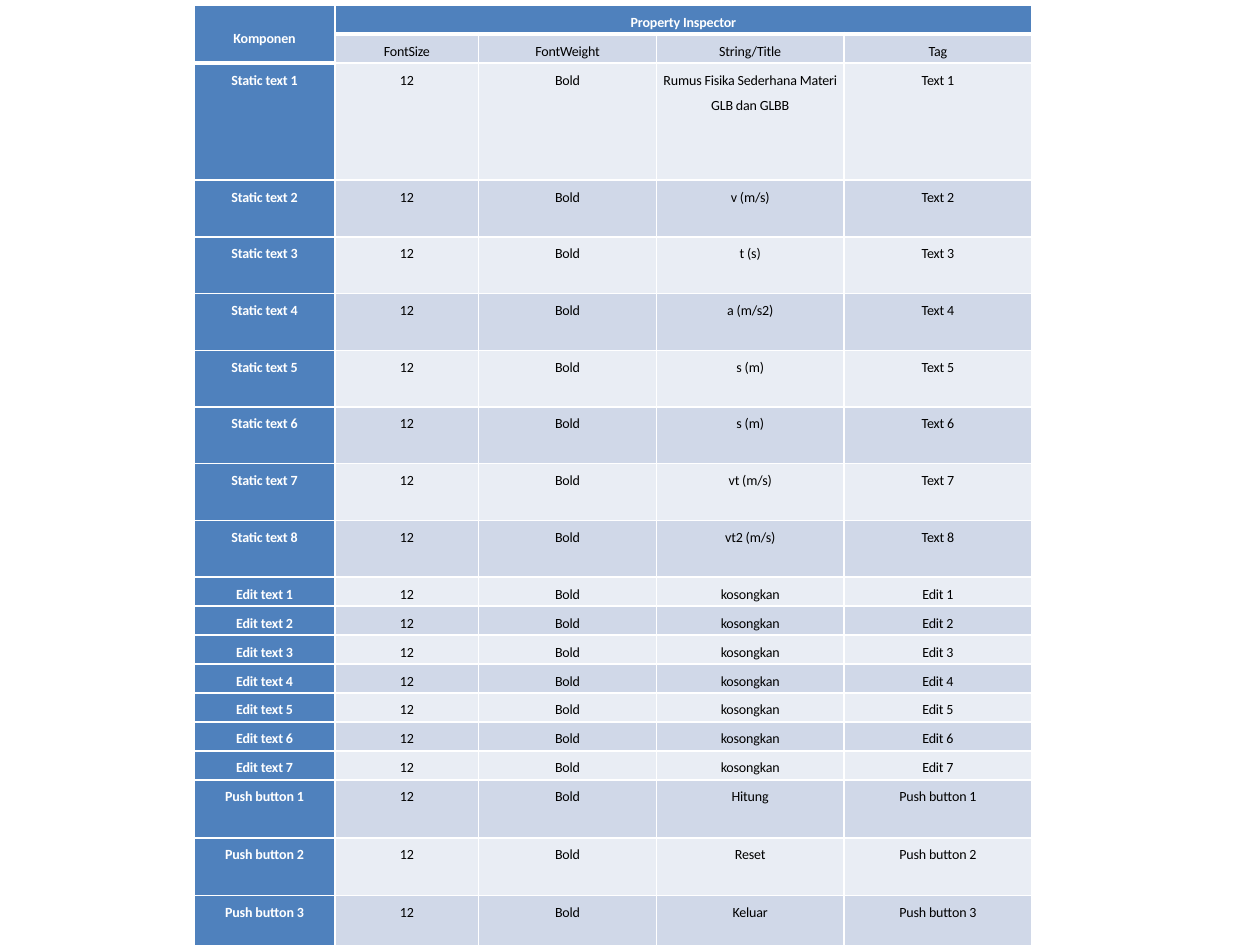
from dataclasses import dataclass
from lxml.etree import SubElement
from pptx import Presentation
from pptx.dml.color import RGBColor as RGB
from pptx.enum.text import MSO_ANCHOR as Anchor, PP_ALIGN as Align
from pptx.oxml.ns import qn
from pptx.util import Inches, Pt


@dataclass(frozen=True)
class Theme:
    font: str = "Calibri"
    size: int = 8
    spacing: float = 1.5
    tracking: int = -10
    accent: str = "4F81BD"
    dark_band: str = "D0D8E8"
    light_band: str = "E9EDF4"
    light: str = "FFFFFF"
    dark: str = "000000"
    thin: int = 1
    thick: int = 3


THEME = Theme()

CORNER = "Komponen"
GROUP = "Property Inspector"
PROPERTIES = ["FontSize", "FontWeight", "String/Title", "Tag"]
FONT_SETTINGS = ["12", "Bold"]
COMPONENTS = [
    ("Static text", "Text", 0.45, [
        "Rumus Fisika Sederhana Materi GLB dan GLBB", "v (m/s)", "t (s)",
        "a (m/s2)", "s (m)", "s (m)", "vt (m/s)", "vt2 (m/s)"]),
    ("Edit text", "Edit", 0.23, ["kosongkan"] * 7),
    ("Push button", "Push button", 0.46, ["Hitung", "Reset", "Keluar"]),
]
LEFT, TOP = 1.54, 0.04
COLUMN_WIDTHS = [1.12, 1.14, 1.41, 1.49, 1.49]
HEADER_HEIGHT = 0.23
FIRST_COMPONENT_HEIGHT = 0.93


def build_rows():
    rows = [[CORNER, GROUP, "", "", ""], ["", *PROPERTIES]]
    heights = [HEADER_HEIGHT] * 2
    for component, tag, height, titles in COMPONENTS:
        for number, title in enumerate(titles, 1):
            rows.append([f"{component} {number}", *FONT_SETTINGS, title, f"{tag} {number}"])
            heights.append(height)
    heights[2] = FIRST_COMPONENT_HEIGHT
    return rows, heights


def add_borders(cell, row, column):
    header_edge = 2 if column == 0 else 1
    widths = {
        "L": THEME.thin,
        "R": THEME.thin,
        "T": THEME.thick if row == header_edge else THEME.thin,
        "B": THEME.thick if row + 1 == header_edge else THEME.thin,
    }
    properties = cell._tc.get_or_add_tcPr()
    for side, width in widths.items():
        line = SubElement(properties, qn(f"a:ln{side}"), w=str(Pt(width)))
        fill = SubElement(line, qn("a:solidFill"))
        SubElement(fill, qn("a:srgbClr"), val=THEME.light)


def format_cell(cell, text, row, column):
    is_header = row == 0 or column == 0
    band = THEME.dark_band if row % 2 else THEME.light_band
    add_borders(cell, row, column)
    cell.fill.solid()
    cell.fill.fore_color.rgb = RGB.from_string(THEME.accent if is_header else band)
    cell.margin_left = cell.margin_right = Inches(0.05)
    cell.margin_top = cell.margin_bottom = 0
    cell.vertical_anchor = Anchor.MIDDLE if text == CORNER else Anchor.TOP
    para = cell.text_frame.paragraphs[0]
    para.text = text
    para.alignment = Align.CENTER
    para.line_spacing = THEME.spacing
    para.font.size = Pt(THEME.size)
    for span in para.runs:
        span.font.name = THEME.font
        span.font.size = Pt(THEME.size)
        span.font.bold = is_header
        span.font.color.rgb = RGB.from_string(THEME.light if is_header else THEME.dark)
        span._r.get_or_add_rPr().set("spc", str(THEME.tracking))


def add_component_table(page):
    rows, heights = build_rows()
    frame = page.shapes.add_table(
        len(rows), len(COLUMN_WIDTHS), Inches(LEFT), Inches(TOP),
        Inches(sum(COLUMN_WIDTHS)), Inches(sum(heights)))
    table = frame.table
    table.first_col = True
    for column, width in zip(table.columns, COLUMN_WIDTHS):
        column.width = Inches(width)
    for table_row, height in zip(table.rows, heights):
        table_row.height = Inches(height)
    for row, texts in enumerate(rows):
        for column, text in enumerate(texts):
            format_cell(table.cell(row, column), text, row, column)
    table.cell(0, 0).merge(table.cell(1, 0))
    table.cell(0, 1).merge(table.cell(0, len(COLUMN_WIDTHS) - 1))


def main():
    deck = Presentation()
    deck.slide_width, deck.slide_height = Inches(10), Inches(7.5)
    page = deck.slides.add_slide(deck.slide_layouts[6])
    add_component_table(page)
    deck.save("out.pptx")


if __name__ == "__main__":
    main()
